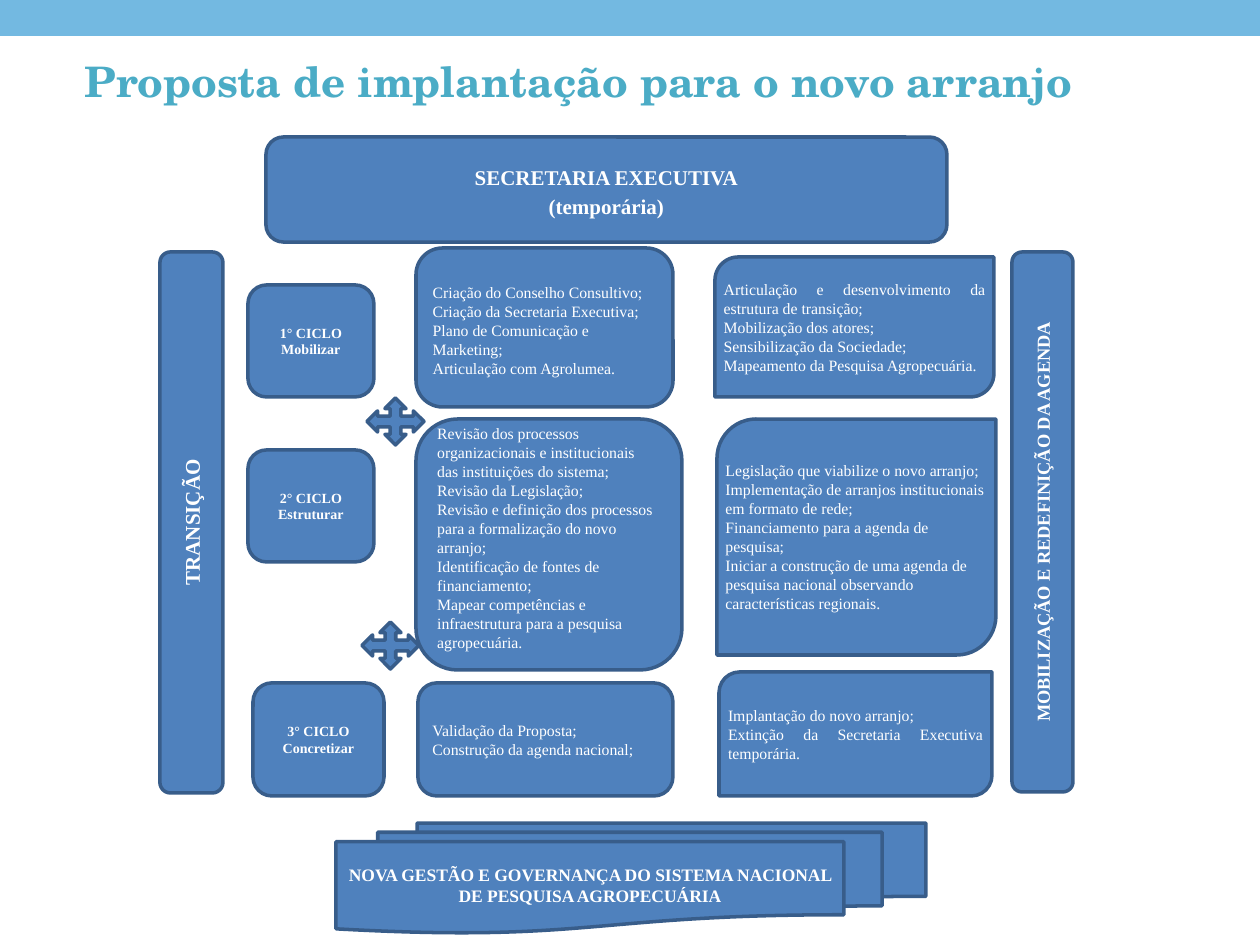
from pptx import Presentation, util as u
from pptx.dml.color import RGBColor
from pptx.enum import shapes, text
from dataclasses import dataclass

PX = 914400 / 126
KIND = shapes.MSO_SHAPE
ALIGN = text.PP_ALIGN


@dataclass(frozen=True)
class Theme:
    band: str = "73B9E1"
    title: str = "4BACC6"
    fill: str = "4F81BD"
    line: str = "385D8A"
    ink: str = "FFFFFF"
    head: str = "TeX Gyre Schola"
    body: str = "Times New Roman"
    big: float = 24
    lead: float = 12
    side: float = 10.5
    base: float = 10
    item: float = 9
    cycle: float = 8


T = Theme()

CYCLES = [
    ((248, 285, 126, 112), "1° CICLO\nMobilizar"),
    ((248, 450, 126, 112), "2° CICLO\nEstruturar"),
    ((253, 683, 131, 113), "3° CICLO\nConcretizar"),
]

# Place, lines, top and bottom inset
TASKS = [
    ((416, 248, 257, 159),
     "Criação do Conselho Consultivo;\nCriação da Secretaria Executiva;\n"
     "Plano de Comunicação e Marketing;\nArticulação com Agrolumea.", 11, 5),
    ((416, 419, 266, 251),
     "Revisão dos processos organizacionais e institucionais das instituições do sistema;\n"
     "Revisão da Legislação;\n"
     "Revisão e definição dos processos para a formalização do novo arranjo;\n"
     "Identificação de fontes de financiamento;\n"
     "Mapear competências e infraestrutura para a pesquisa agropecuária.", 0, 14),
    ((418, 683, 255, 113),
     "Validação da Proposta;\nConstrução da agenda nacional;", 5, 5),
]

# Place, lines, number of justified paragraphs
GOALS = [
    ((715, 257, 279, 140),
     "Articulação e desenvolvimento da estrutura de transição;\n"
     "Mobilização dos atores;\nSensibilização da Sociedade;\n"
     "Mapeamento da Pesquisa Agropecuária.", 2),
    ((717, 419, 279, 236),
     "Legislação que viabilize o novo arranjo;\n"
     "Implementação de arranjos institucionais em formato de rede;\n"
     "Financiamento para a agenda de pesquisa;\n"
     "Iniciar a construção de uma agenda de pesquisa nacional observando "
     "características regionais.", 0),
    ((719, 672, 273, 124),
     "Implantação do novo arranjo;\n"
     "Extinção da Secretaria Executiva temporária.", 2),
]


def px(n):
    return u.Emu(round(n * PX))


def rgb(code):
    return RGBColor.from_string(code)


def write(frame, words, size, color=T.ink, font=T.body, bold=True,
          align=ALIGN.CENTER):
    frame.text = words
    frame.word_wrap = True
    frame.vertical_anchor = text.MSO_ANCHOR.MIDDLE
    for para in frame.paragraphs:
        para.alignment = align
        for run in para.runs:
            run.font.size = u.Pt(size)
            run.font.name = font
            run.font.bold = bold
            run.font.color.rgb = rgb(color)


def block(slide, kind, place, fill=T.fill, line=T.line):
    shape = slide.shapes.add_shape(kind, *map(px, place))
    shape.shadow.inherit = False
    shape.fill.solid()
    shape.fill.fore_color.rgb = rgb(fill)
    if line:
        shape.line.color.rgb = rgb(line)
        shape.line.width = u.Pt(2)
    else:
        shape.line.fill.background()
    return shape


def label(slide, kind, place, words, size, top=5, base=5, **style):
    shape = block(slide, kind, place)
    frame = shape.text_frame
    frame.margin_left = frame.margin_right = px(9)
    frame.margin_top, frame.margin_bottom = px(top), px(base)
    write(frame, words, size, **style)
    return frame


def pillar(slide, place, words, size):
    frame = label(slide, KIND.ROUNDED_RECTANGLE, place, words, size)
    frame._txBody.bodyPr.set("vert", "vert270")


def title(slide, place, words):
    frame = slide.shapes.add_textbox(*map(px, place)).text_frame
    write(frame, words, T.big, T.title, T.head, align=ALIGN.LEFT)


def main():
    deck = Presentation()
    deck.slide_width, deck.slide_height = px(1260), px(945)
    slide = deck.slides.add_slide(deck.slide_layouts[6])

    # Heading
    block(slide, KIND.RECTANGLE, (0, 0, 1260, 36), T.band, None)
    title(slide, (72, 42, 1135, 77), "Proposta de implantação para o novo arranjo")

    # Frame around the cycles
    pillar(slide, (160, 252, 63, 541), "TRANSIÇÃO", T.lead)
    pillar(slide, (1012, 252, 61, 540),
           "MOBILIZAÇÃO E REDEFINIÇÃO DA AGENDA", T.side)
    lead = label(slide, KIND.ROUNDED_RECTANGLE, (266, 137, 681, 105),
                 "SECRETARIA EXECUTIVA\v(temporária)", T.lead)
    lead.paragraphs[0].line_spacing = 1.15
    label(slide, KIND.FLOWCHART_MULTIDOCUMENT, (336, 823, 590, 110),
          "NOVA GESTÃO E GOVERNANÇA DO SISTEMA NACIONAL DE PESQUISA AGROPECUÁRIA",
          T.base)

    # Cycles and the arrows between them
    for place, words in CYCLES:
        label(slide, KIND.ROUNDED_RECTANGLE, place, words, T.cycle)
    for left, top in ((367, 398), (362, 622)):
        block(slide, KIND.QUAD_ARROW, (left, top, 57, 47))

    # Tasks of each cycle
    for place, words, top, base in TASKS:
        frame = label(slide, KIND.ROUNDED_RECTANGLE, place, words, T.item,
                      top, base, bold=False, align=ALIGN.LEFT)
        frame.margin_right = px(13)

    # Goals of each cycle: side insets offset the one the round corner adds
    for place, words, count in GOALS:
        frame = label(slide, KIND.ROUND_2_DIAG_RECTANGLE, place, words, T.item,
                      bold=False, align=ALIGN.LEFT)
        inset = round(9 - 0.05 * place[3])
        frame.margin_left = frame.margin_right = px(inset)
        for para in frame.paragraphs[:count]:
            para.alignment = ALIGN.JUSTIFY

    deck.save("out.pptx")


if __name__ == "__main__":
    main()
